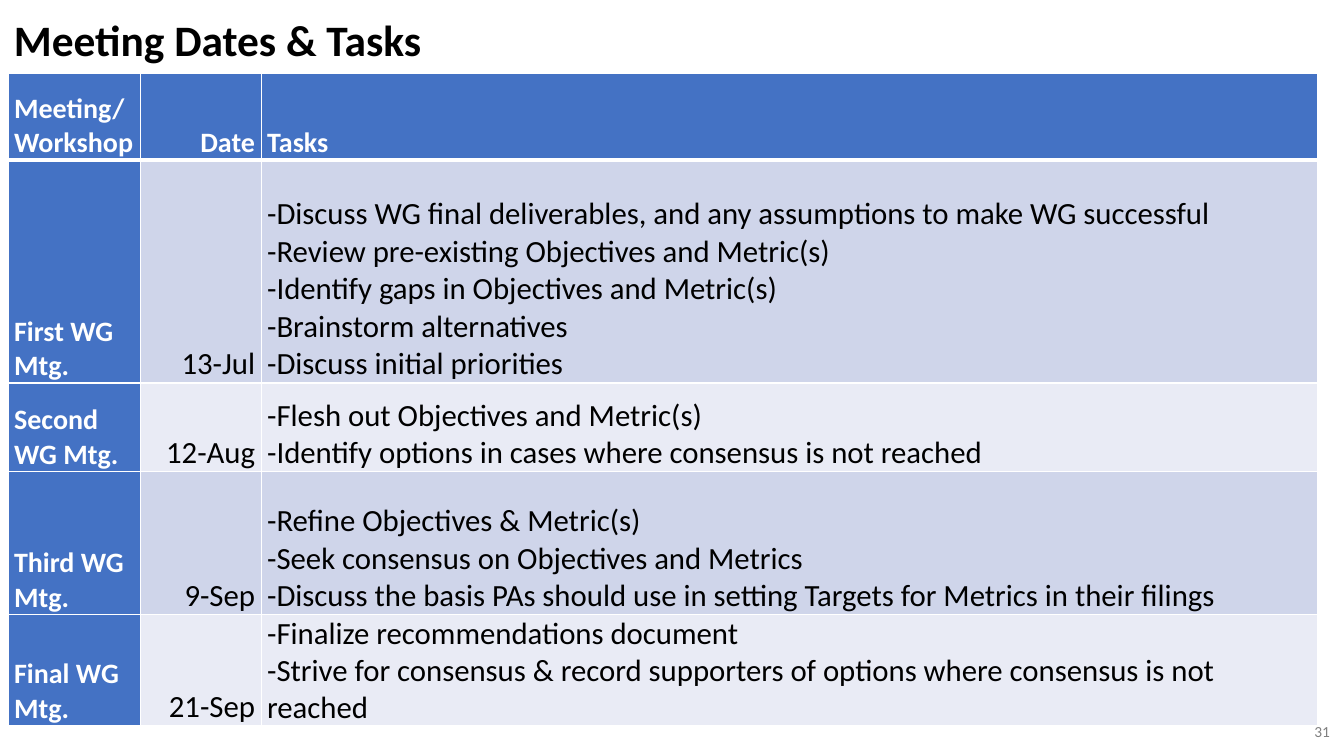
import pptx
import pptx.dml.color
import pptx.enum.text
import pptx.oxml
import pptx.oxml.ns
import pptx.util

Inches = pptx.util.Inches
ALIGN = pptx.enum.text.PP_ALIGN
ANCHOR = pptx.enum.text.MSO_ANCHOR

WHITE, BLACK, GRAY, BLUE = "FFFFFF", "000000", "808080", "4472C4"
BAND_FILLS = ["CFD5EA", "E9EBF5"]
COLUMN_WIDTHS = [1.31, 1.2, 10.48]
ROW_HEIGHTS = [0.86, 2.21, 0.88, 1.42, 1.1]
MEETINGS = [
    ("Meeting/ Workshop", "Date", "Tasks"),
    ("First WG Mtg.", "13-Jul",
     "-Discuss WG final deliverables, and any assumptions to make WG successful\n"
     "-Review pre-existing Objectives and Metric(s)\n"
     "-Identify gaps in Objectives and Metric(s)\n"
     "-Brainstorm alternatives\n"
     "-Discuss initial priorities"),
    ("Second WG Mtg.", "12-Aug",
     "-Flesh out Objectives and Metric(s)\n"
     "-Identify options in cases where consensus is not reached"),
    ("Third WG Mtg.", "9-Sep",
     "-Refine Objectives & Metric(s)\n"
     "-Seek consensus on Objectives and Metrics\n"
     "-Discuss the basis PAs should use in setting Targets for Metrics in their filings"),
    ("Final WG Mtg.", "21-Sep",
     "-Finalize recommendations document\n"
     "-Strive for consensus & record supporters of options where consensus is not reached"),
]


def rgb(color):
    return pptx.dml.color.RGBColor.from_string(color)


def write_text(text_frame, text, size, color, bold=False, align=ALIGN.LEFT):
    text_frame.word_wrap = True
    text_frame.text = text
    for paragraph in text_frame.paragraphs:
        paragraph.alignment = align
        for run in paragraph.runs:
            run.font.name = "Calibri"
            run.font.size = pptx.util.Pt(size)
            run.font.bold = bold
            run.font.color.rgb = rgb(color)


presentation = pptx.Presentation()
presentation.slide_width = Inches(13.33)
presentation.slide_height = Inches(7.5)
slide = presentation.slides.add_slide(presentation.slide_layouts[6])

number_box = slide.shapes.add_textbox(Inches(12.8), Inches(7.06), Inches(0.49), Inches(0.4))
number_box.text_frame.vertical_anchor = ANCHOR.MIDDLE
write_text(number_box.text_frame, "31", 11, GRAY, align=ALIGN.RIGHT)
number_box.text_frame.paragraphs[0].space_after = pptx.util.Pt(6)

table = slide.shapes.add_table(
    len(ROW_HEIGHTS), len(COLUMN_WIDTHS), Inches(0.08), Inches(0.73),
    Inches(sum(COLUMN_WIDTHS)), Inches(sum(ROW_HEIGHTS))).table
for column, width in zip(table.columns, COLUMN_WIDTHS):
    column.width = Inches(width)
for row, height in zip(table.rows, ROW_HEIGHTS):
    row.height = Inches(height)

for row_index, meeting in enumerate(MEETINGS):
    for column_index, text in enumerate(meeting):
        cell = table.cell(row_index, column_index)
        heading = row_index == 0 or column_index == 0
        write_text(cell.text_frame, text, 20 if heading else 22,
                   WHITE if heading else BLACK, heading,
                   ALIGN.RIGHT if column_index == 1 else ALIGN.LEFT)
        cell.vertical_anchor = ANCHOR.BOTTOM
        cell.margin_left = cell.margin_right = Inches(0.06)
        cell.margin_top = cell.margin_bottom = 0
        # Borders precede the fill in the cell properties
        for side in "LRTB":
            thick = (row_index, side) in [(0, "B"), (1, "T")]
            width = pptx.util.Pt(3 if thick else 1)
            cell._tc.get_or_add_tcPr().append(pptx.oxml.parse_xml(
                f'<a:ln{side} {pptx.oxml.ns.nsdecls("a")} w="{width}"><a:solidFill>'
                f'<a:srgbClr val="{WHITE}"/></a:solidFill></a:ln{side}>'))
        cell.fill.solid()
        cell.fill.fore_color.rgb = rgb(BLUE if heading else BAND_FILLS[(row_index - 1) % 2])

title_box = slide.shapes.add_textbox(Inches(0.04), 0, Inches(10.98), Inches(0.84))
title_box.text_frame.vertical_anchor = ANCHOR.MIDDLE
write_text(title_box.text_frame, "Meeting Dates & Tasks", 31, BLACK, bold=True)
title_box.text_frame.paragraphs[0].line_spacing = 0.9

presentation.save("out.pptx")
